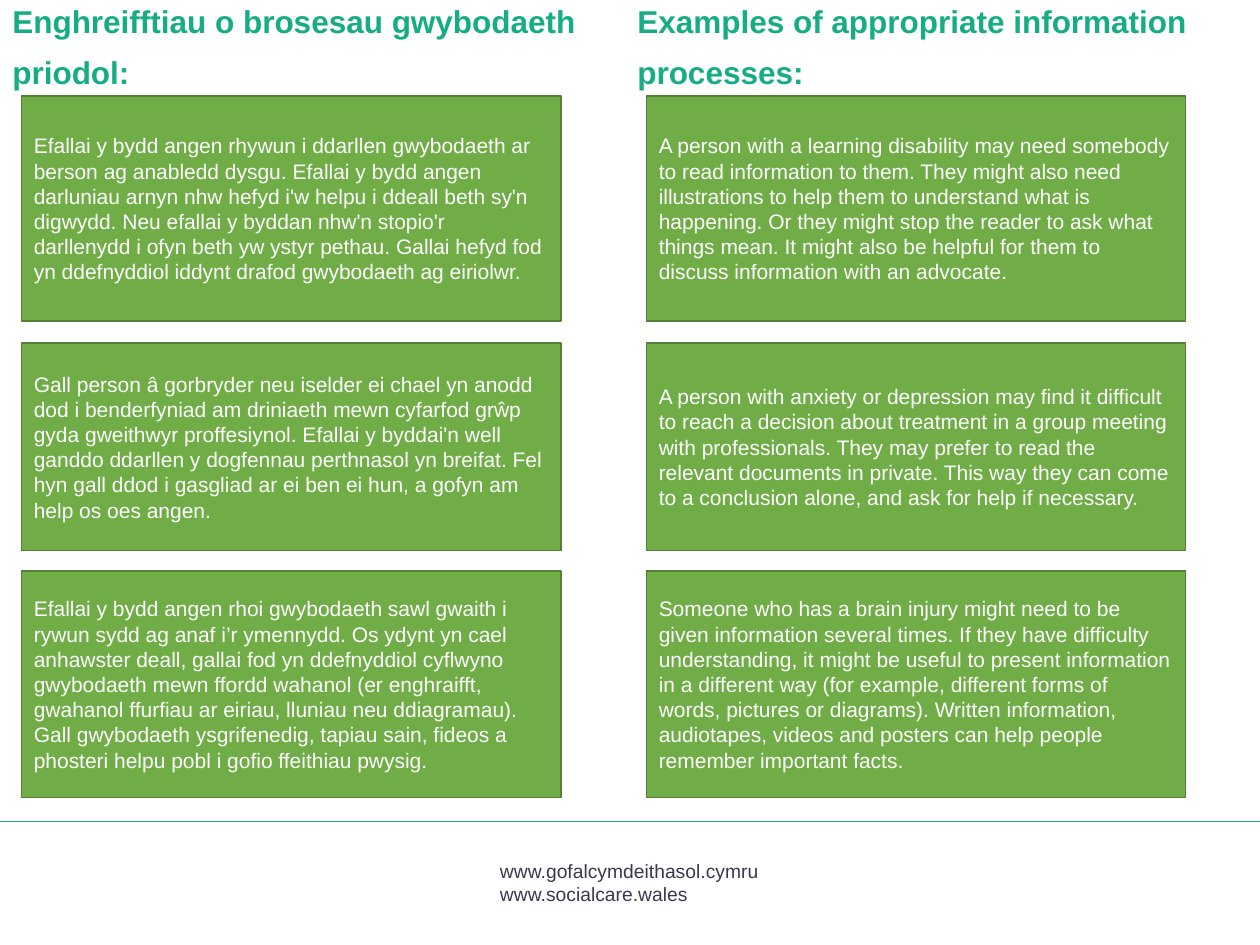
from dataclasses import dataclass

from lxml.etree import SubElement
from pptx import Presentation
from pptx.dml.color import RGBColor as Rgb
from pptx.enum.shapes import MSO_CONNECTOR as Connector, MSO_SHAPE as Preset
from pptx.enum.text import MSO_ANCHOR as Anchor, PP_ALIGN as Align
from pptx.oxml.ns import qn
from pptx.util import Inches, Pt


@dataclass(frozen=True)
class Theme:
    font: str = "Arial"
    teal: Rgb = Rgb(0x16, 0xAD, 0x85)
    card_fill: Rgb = Rgb(0x70, 0xAD, 0x47)
    card_edge: Rgb = Rgb(0x53, 0x80, 0x35)
    card_text: Rgb = Rgb(0xFF, 0xFF, 0xFF)
    footer_text: Rgb = Rgb(0x37, 0x39, 0x4C)
    heading_size: int = 18
    card_size: int = 12
    footer_size: int = 11


THEME = Theme()

# Card rows: top and height; columns share them
CARD_ROWS = [(0.76, 1.79), (2.72, 1.65), (4.53, 1.8)]
CARD_WIDTH = 4.28

# Each column: heading left and width, card left, heading lines, card texts
COLUMNS = [
    (4.96, 4.91, 5.13, ["Examples of appropriate information", "processes:"], [
        "A person with a learning disability may need somebody to read "
        "information to them. They might also need illustrations to help them "
        "to understand what is happening. Or they might stop the reader to ask "
        "what things mean. It might also be helpful for them to discuss "
        "information with an advocate.",
        "A person with anxiety or depression may find it difficult to reach a "
        "decision about treatment in a group meeting with professionals. They "
        "may prefer to read the relevant documents in private. This way they "
        "can come to a conclusion alone, and ask for help if necessary.",
        "Someone who has a brain injury might need to be given information "
        "several times. If they have difficulty understanding, it might be "
        "useful to present information in a different way (for example, "
        "different forms of words, pictures or diagrams). Written information, "
        "audiotapes, videos and posters can help people remember important "
        "facts.",
    ]),
    (0, 4.8, 0.17, ["Enghreifftiau o brosesau gwybodaeth", "priodol:"], [
        "Efallai y bydd angen rhywun i ddarllen gwybodaeth ar berson ag "
        "anabledd dysgu. Efallai y bydd angen darluniau arnyn nhw hefyd i'w "
        "helpu i ddeall beth sy'n digwydd. Neu efallai y byddan nhw'n stopio'r "
        "darllenydd i ofyn beth yw ystyr pethau. Gallai hefyd fod yn "
        "ddefnyddiol iddynt drafod gwybodaeth ag eiriolwr.",
        "Gall person â gorbryder neu iselder ei chael yn anodd dod i "
        "benderfyniad am driniaeth mewn cyfarfod grŵp gyda gweithwyr "
        "proffesiynol. Efallai y byddai'n well ganddo ddarllen y dogfennau "
        "perthnasol yn breifat. Fel hyn gall ddod i gasgliad ar ei ben ei hun, "
        "a gofyn am help os oes angen.",
        "Efallai y bydd angen rhoi gwybodaeth sawl gwaith i rywun sydd ag anaf "
        "i’r ymennydd. Os ydynt yn cael anhawster deall, gallai fod yn "
        "ddefnyddiol cyflwyno gwybodaeth mewn ffordd wahanol (er enghraifft, "
        "gwahanol ffurfiau ar eiriau, lluniau neu ddiagramau). Gall gwybodaeth "
        "ysgrifenedig, tapiau sain, fideos a phosteri helpu pobl i gofio "
        "ffeithiau pwysig.",
    ]),
]


def write(frame, lines, size, color, bold=False):
    frame.word_wrap = True
    frame.text = "\n".join(lines)
    for paragraph in frame.paragraphs:
        paragraph.alignment = Align.LEFT
        for run in paragraph.runs:
            run.font.name = THEME.font
            run.font.size = Pt(size)
            run.font.bold = bold
            run.font.color.rgb = color


def add_label(slide, box, lines, size, color, bold=False):
    label = slide.shapes.add_textbox(*map(Inches, box))
    write(label.text_frame, lines, size, color, bold)
    return label.text_frame


def add_heading(slide, left, width, lines):
    heading = add_label(slide, (left, 0, width, 0.76), lines,
                        THEME.heading_size, THEME.teal, bold=True)
    for paragraph in heading.paragraphs:
        paragraph.line_spacing = 0.9
    for paragraph in heading.paragraphs[1:]:
        paragraph.space_before = Pt(10)


def add_card(slide, box, text):
    card = slide.shapes.add_shape(Preset.RECTANGLE, *map(Inches, box))
    card.shadow.inherit = False
    card.fill.solid()
    card.fill.fore_color.rgb = THEME.card_fill
    card.line.color.rgb = THEME.card_edge
    card.line.width = Pt(1)
    card.text_frame.vertical_anchor = Anchor.MIDDLE
    write(card.text_frame, [text], THEME.card_size, THEME.card_text)


def add_rule(slide, top, width):
    rule = slide.shapes.add_connector(
        Connector.STRAIGHT, 0, Inches(top), Inches(width), Inches(top))
    rule.line.color.rgb = THEME.teal
    rule.line.width = Pt(1)
    SubElement(rule._element.spPr, qn("a:effectLst"))


def main():
    deck = Presentation()
    deck.slide_width, deck.slide_height = Inches(10), Inches(7.5)
    slide = deck.slides.add_slide(deck.slide_layouts[6])

    # Footer
    add_label(slide, (3.87, 6.77, 2.26, 0.46),
              ["www.gofalcymdeithasol.cymru", "www.socialcare.wales"],
              THEME.footer_size, THEME.footer_text)
    add_rule(slide, 6.52, 10)

    # One column per language
    for heading_left, heading_width, card_left, heading, examples in COLUMNS:
        add_heading(slide, heading_left, heading_width, heading)
        for (top, height), example in zip(CARD_ROWS, examples):
            add_card(slide, (card_left, top, CARD_WIDTH, height), example)

    deck.save("out.pptx")


if __name__ == "__main__":
    main()
